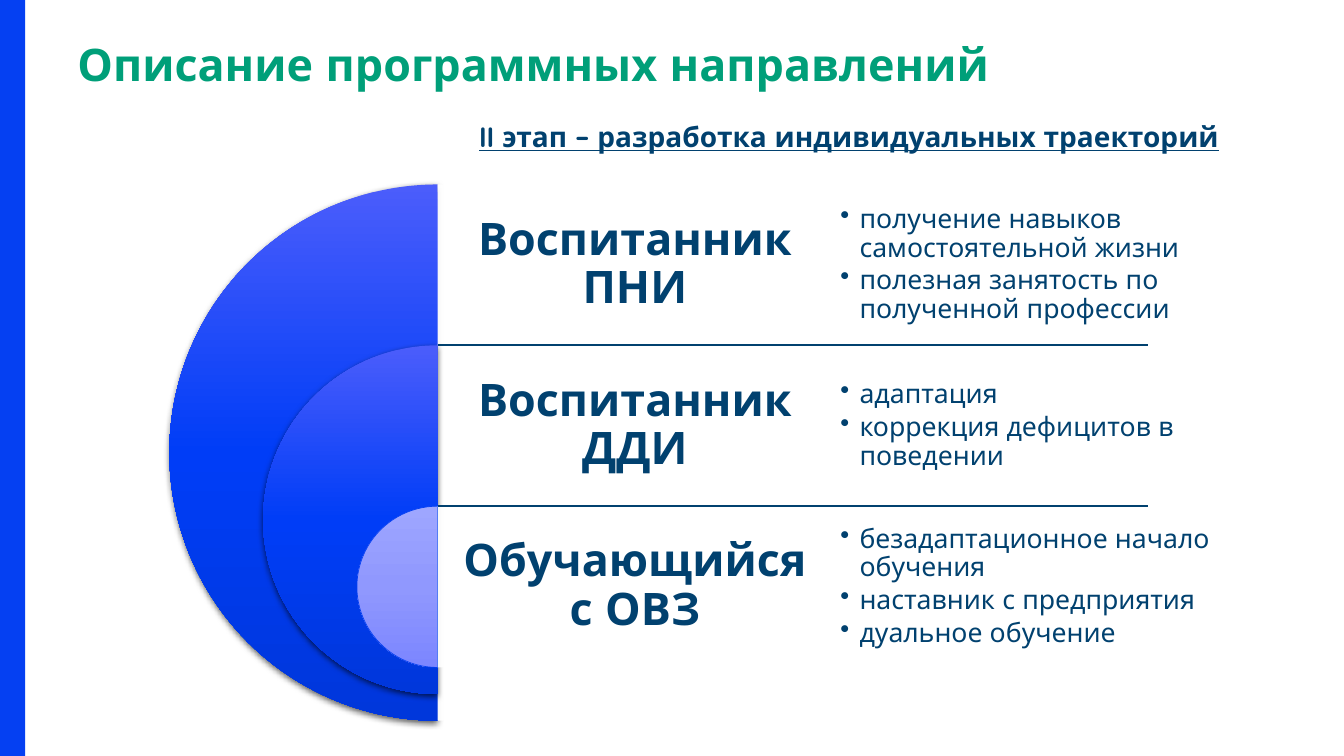
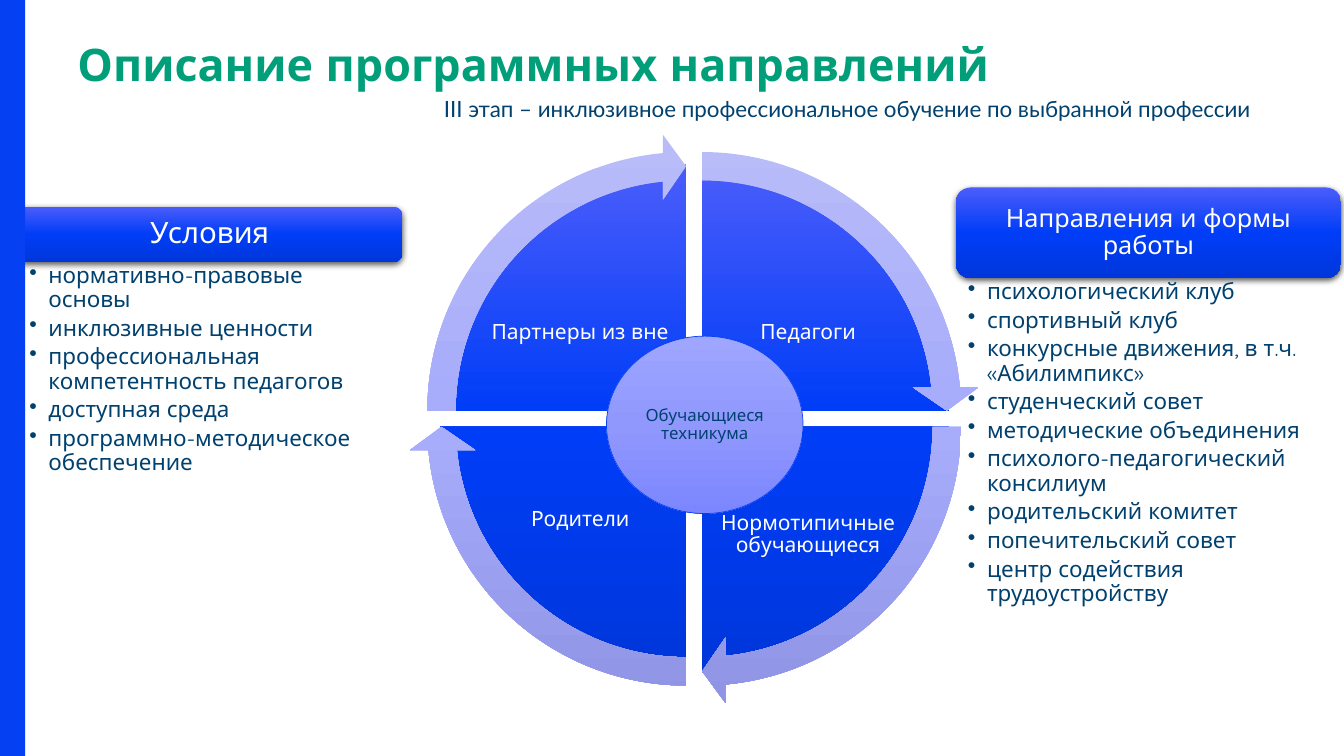
from lxml import etree
from pptx import Presentation
from pptx import util as u
from pptx.dml.color import RGBColor
from pptx.enum import shapes, text
from pptx.oxml import ns

BLUE = RGBColor(0x05, 0x40, 0xF2)
NAVY = RGBColor(0x01, 0x41, 0x6F)
GREEN = RGBColor(0x00, 0x9F, 0x79)
WHITE = RGBColor(0xFF, 0xFF, 0xFF)
DEEP = [RGBColor(0x4B, 0x5D, 0xFB), RGBColor(0x00, 0x3D, 0xF7), RGBColor(0x00, 0x37, 0xDB)]
LILAC = [RGBColor(0x9E, 0xA6, 0xFF), RGBColor(0x90, 0x98, 0xFE), RGBColor(0x7C, 0x86, 0xFF)]
PALE = [RGBColor(0xB8, 0xBC, 0xF9), RGBColor(0xA7, 0xAC, 0xFB), RGBColor(0x8F, 0x94, 0xE5)]
W, H = 13.33, 7.5
FONT = "Quicksand"
TURN = 216  # full circle in adjustment units
QUARTER = TURN / 4
SHAPE = shapes.MSO_SHAPE
CENTER = text.PP_ALIGN.CENTER
MIDDLE = text.MSO_ANCHOR.MIDDLE


def inches(box):
    return [u.Inches(v) for v in box]


def child(parent, tag, **attrs):
    return etree.SubElement(parent, ns.qn(tag), {k: str(v) for k, v in attrs.items()})


def set_gradient(fill, colors):
    """Vertical gradient with evenly spaced stops."""
    fill.gradient()
    fill.gradient_angle = 270
    stops = fill._fill._gradFill.find(ns.qn("a:gsLst"))
    for gs in list(stops):
        stops.remove(gs)
    for i, color in enumerate(colors):
        gs = child(stops, "a:gs", pos=100000 * i // (len(colors) - 1))
        child(gs, "a:srgbClr", val=color)


def add_shadow(sp):
    effects = sp._element.spPr.find(ns.qn("a:effectLst"))
    shadow = child(effects, "a:outerShdw", blurRad=u.Pt(4.5), dist=u.Pt(1.5),
                   dir=5400000, algn="ctr", rotWithShape=0)
    child(child(shadow, "a:srgbClr", val="000000"), "a:alpha", val=63000)


def add_figure(s, kind, box, fill, adj=(), line=None, shadow=False, opacity=None):
    sp = s.shapes.add_shape(kind, *inches(box))
    for i, value in enumerate(adj):
        sp.adjustments[i] = value
    if isinstance(fill, list):
        set_gradient(sp.fill, fill)
    else:
        sp.fill.solid()
        sp.fill.fore_color.rgb = fill
    if opacity:
        color = sp._element.spPr.find(ns.qn("a:solidFill"))[0]
        child(color, "a:alpha", val=opacity * 1000)
    if line:
        sp.line.color.rgb = line
        sp.line.width = u.Pt(0.5)
    else:
        sp.line.fill.background()
    sp.shadow.inherit = False
    if shadow:
        add_shadow(sp)
    return sp


def write(sp, *lines, size, color=NAVY, font=FONT, bold=False, underline=False, align=None,
          anchor=text.MSO_ANCHOR.TOP, insets=(0.1, 0.05), spacing=0.9, bullet_gap=None):
    """Fill a shape with paragraphs; bullet_gap is the space after, as a share of the size."""
    tf = sp.text_frame
    tf.word_wrap = True
    tf.vertical_anchor = anchor
    tf.margin_left = tf.margin_right = u.Inches(insets[0])
    tf.margin_top = tf.margin_bottom = u.Inches(insets[1])
    for i, line in enumerate(lines):
        p = tf.add_paragraph() if i else tf.paragraphs[0]
        p.alignment = align
        p.line_spacing = spacing
        if bullet_gap:
            p.space_after = u.Pt(round(bullet_gap * size, 2))
            pPr = p._p.get_or_add_pPr()
            pPr.set("marL", str(u.Inches(0.19)))
            pPr.set("indent", str(-u.Inches(0.19)))
            child(pPr, "a:buChar", char="•")
        r = p.add_run()
        r.text = line
        r.font.name = font
        r.font.size = u.Pt(size)
        r.font.bold = bold
        r.font.underline = underline
        r.font.color.rgb = color


def add_text(s, box, *lines, **style):
    write(s.shapes.add_textbox(*inches(box)), *lines, **style)


def add_rule(s, x1, x2, y):
    rule = s.shapes.add_connector(shapes.MSO_CONNECTOR.STRAIGHT, *inches((x1, y, x2, y)))
    rule.line.color.rgb = NAVY
    rule.line.width = u.Pt(1.5)
    child(rule._element.spPr, "a:effectLst")


def add_frame(s):
    """Title and side band shared by the slides."""
    add_figure(s, SHAPE.RECTANGLE, (0, 0, 0.25, H), BLUE)
    add_text(s, (0.67, 0.4, 11.93, 0.49), "Описание программных направлений",
             size=32, color=GREEN, bold=True, spacing=u.Pt(32))


def add_nested_groups(s, box, groups):
    """Half discs nested on the left edge of the box, one row of text each."""
    x, y, w, h = box
    row = 0.3 * h
    col = w / 2
    for i, (diameter, fill, panel, name, items) in enumerate(groups):
        top = y + i * row
        outer = i < len(groups) - 1
        add_figure(s, SHAPE.PIE, (x - diameter / 2, top, diameter, diameter), fill,
                   adj=(QUARTER, 3 * QUARTER), shadow=outer, line=None if outer else BLUE)
        if panel:
            add_figure(s, SHAPE.RECTANGLE, (x, top, w, diameter), WHITE, opacity=90)
        add_text(s, (x, top, col, row), name, size=32, bold=True, align=CENTER,
                 anchor=MIDDLE, insets=(0.13, 0.13))
        add_text(s, (x + col, top, col, row), *items, size=19, anchor=MIDDLE,
                 insets=(0.08, 0.08), bullet_gap=0.15)
    for i in range(1, len(groups)):
        add_rule(s, x, x + 0.9 * w, y + i * row)


def add_wheel(s, box, hub, labels):
    """Four quarter discs clockwise from the top right, ringed by arrows.

    Each label comes with its drop below the usual line."""
    x, y, d, _ = box
    cx, cy = x + d / 2, y + d / 2
    gap, ring, label_w, label_h = 0.08, 5.5, 1.81, 1.34
    quarters = [(1, -1), (1, 1), (-1, 1), (-1, -1)]

    def square(side, dx, dy):
        return cx + dx * gap - side / 2, cy + dy * gap - side / 2, side, side

    for i, ((dx, dy), (label, drop)) in enumerate(zip(quarters, labels)):
        start = (i + 3) * QUARTER % TURN
        add_figure(s, SHAPE.PIE, square(d, dx, dy), DEEP,
                   adj=(start, (start + QUARTER) % TURN))
        add_text(s, (cx + dx * 1.13 - label_w / 2, cy + dy * 0.85 - label_h / 2 + drop,
                     label_w, label_h), label, size=15, color=WHITE, align=CENTER,
                 anchor=MIDDLE, insets=(0.02, 0.02))
    head = 3.275
    for i, (dx, dy) in enumerate(quarters):
        start = (i + 3) * QUARTER % TURN
        add_figure(s, SHAPE.CIRCULAR_ARROW, square(ring, dx, dy), PALE,
                   adj=(0.051, head, start + QUARTER - head, start, 0.059))
    sp = add_figure(s, SHAPE.OVAL, (cx - 0.87, cy - 0.82, 1.95, 1.76), LILAC, line=BLUE)
    write(sp, hub, size=12, align=CENTER, anchor=MIDDLE, insets=(0.02, 0.02))


def add_card(s, box, head_h, head, head_size, items):
    x, y, w, h = box
    sp = add_figure(s, SHAPE.ROUNDED_RECTANGLE, (x, y, w, head_h), DEEP, shadow=True)
    write(sp, head, size=head_size, color=WHITE, align=CENTER, anchor=MIDDLE,
          insets=(0.07, 0.07))
    add_text(s, (x, y + head_h, w, h - head_h), *items, size=16, insets=(0.12, 0.02),
             bullet_gap=0.2)


def paths_slide(prs):
    s = prs.slides.add_slide(prs.slide_layouts[6])
    add_text(s, (3.84, 1.14, 9.16, 0.44), "II этап – разработка индивидуальных траекторий",
             size=20, bold=True, underline=True, align=CENTER, spacing=1.0)
    add_nested_groups(s, (4.34, 1.83, 7.83, 5.32), [
        (5.32, DEEP, True, "Воспитанник ПНИ",
         ["получение навыков самостоятельной жизни",
          "полезная занятость по полученной профессии"]),
        (3.46, DEEP, False, "Воспитанник ДДИ",
         ["адаптация", "коррекция дефицитов в поведении"]),
        (1.6, LILAC, True, "Обучающийся с ОВЗ",
         ["безадаптационное начало обучения", "наставник с предприятия",
          "дуальное обучение"]),
    ])
    add_frame(s)


def training_slide(prs):
    s = prs.slides.add_slide(prs.slide_layouts[6])
    add_text(s, (3.78, 0.89, 9.25, 0.37),
             "III этап – инклюзивное профессиональное обучение по выбранной профессии",
             size=16, font="Lato", align=CENTER, spacing=1.0)
    add_wheel(s, (4.44, 1.71, 4.89, 4.89), "Обучающиеся техникума", [
        ("Педагоги", 0), ("Нормотипичные обучающиеся", 0.3),
        ("Родители", 0.15), ("Партнеры из вне", 0)])
    add_card(s, (0.17, 2.05, 3.82, 4.32), 0.55, "Условия", 21, [
        "нормативно-правовые основы", "инклюзивные ценности",
        "профессиональная компетентность педагогов", "доступная среда",
        "программно-методическое обеспечение"])
    add_card(s, (9.48, 1.86, 3.82, 4.71), 0.9, "Направления и формы работы", 18, [
        "психологический клуб", "спортивный клуб",
        "конкурсные движения, в т.ч. «Абилимпикс»", "студенческий совет",
        "методические объединения", "психолого-педагогический консилиум",
        "родительский комитет", "попечительский совет",
        "центр содействия трудоустройству"])
    add_frame(s)


def main():
    prs = Presentation()
    prs.slide_width, prs.slide_height = inches((W, H))
    paths_slide(prs)
    training_slide(prs)
    prs.save("out.pptx")


if __name__ == "__main__":
    main()
